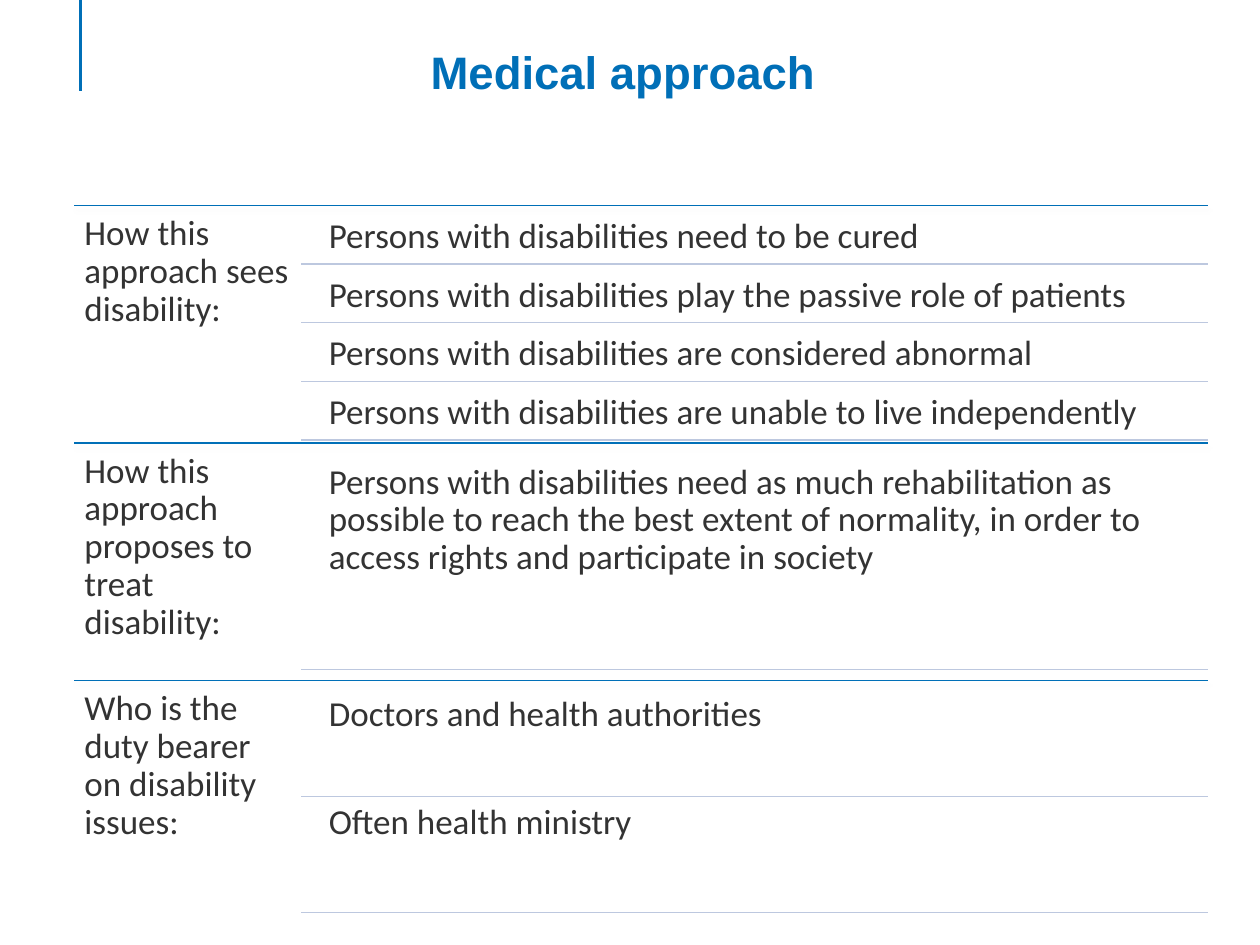
from lxml.etree import SubElement
from pptx import Presentation
from pptx.dml.color import RGBColor
from pptx.enum.shapes import MSO_CONNECTOR
from pptx.enum.text import MSO_ANCHOR, PP_ALIGN
from pptx.oxml.ns import qn
from pptx.util import Inches, Pt

BLUE, PALE, DARK = "006FB7", "BDC8DF", "333333"
LEFT, TOP, WIDTH = 0.59, 1.63, 9.0
SECTION_H = 1.885
LABEL_W = WIDTH / 5
ITEM_X, ITEM_W = 2.53, 7.07
GAP_SHARE = 0.05  # gap between items, as a share of an item's height

# Label, then items as (text, vertical shift of the text)
SECTIONS = [
    ("How this approach sees disability:", [
        ("Persons with disabilities need to be cured", 0),
        ("Persons with disabilities play the passive role of patients", 0),
        ("Persons with disabilities are considered abnormal", 0),
        ("Persons with disabilities are unable to live independently", 0),
    ]),
    ("How this approach proposes to treat disability:", [
        ("Persons with disabilities need as much rehabilitation as possible to "
         "reach the best extent of normality, in order to access rights and "
         "participate in society", 0),
    ]),
    ("Who is the duty bearer on disability issues:", [
        ("Doctors and health authorities", 0),
        ("Often health ministry", -0.06),
    ]),
]


def rgb(value):
    return RGBColor.from_string(value)


def write(tf, text, size=20, font="Calibri", color=DARK, bold=False,
          align=PP_ALIGN.LEFT, spacing=0.9, after=7):
    tf.word_wrap = True
    tf.vertical_anchor = MSO_ANCHOR.TOP
    p = tf.paragraphs[0]
    p.alignment, p.line_spacing, p.space_after = align, spacing, Pt(after)
    r = p.add_run()
    r.text = text
    r.font.name, r.font.size, r.font.bold = font, Pt(size), bold
    r.font.color.rgb = rgb(color)


def add_text(shapes, text, x, y, w, h):
    tf = shapes.add_textbox(*map(Inches, (x, y, w, h))).text_frame
    tf.margin_left = tf.margin_right = Inches(0.08)
    tf.margin_top = tf.margin_bottom = Inches(0.08)
    write(tf, text)


def add_line(shapes, x1, y1, x2, y2, color, width=0.75, shadow=None):
    """Draw a line; shadow is (opacity in percent, distance in points)."""
    line = shapes.add_connector(MSO_CONNECTOR.STRAIGHT,
                                *map(Inches, (x1, y1, x2, y2)))
    line.line.color.rgb = rgb(color)
    line.line.width = Pt(width)
    effects = SubElement(line._element.spPr, qn("a:effectLst"))
    if shadow:
        opacity, distance = shadow
        outer = SubElement(effects, qn("a:outerShdw"), blurRad=str(Pt(3.1)),
                           dist=str(Pt(distance)), dir="5400000",
                           rotWithShape="0")
        black = SubElement(outer, qn("a:srgbClr"), val="000000")
        SubElement(black, qn("a:alpha"), val=str(opacity * 1000))


def add_title(s, text):
    title = s.shapes.title
    title.left, title.top, title.width, title.height = map(
        Inches, (0.81, 0.3, 8.27, 1.19))
    write(title.text_frame, text, size=26, font="Arial", color=BLUE, bold=True,
          align=PP_ALIGN.CENTER, spacing=1.0, after=0)


def add_section(shapes, top, label, items):
    right = LEFT + WIDTH
    add_line(shapes, LEFT, top, right, top, BLUE, shadow=(35, 1.8))
    add_text(shapes, label, LEFT, top, LABEL_W, SECTION_H)
    n = len(items)
    item_h = SECTION_H / (n + (n + 1) * GAP_SHARE)
    gap = item_h * GAP_SHARE
    for i, (text, shift) in enumerate(items):
        y = top + gap + i * (item_h + gap)
        add_text(shapes, text, ITEM_X, y + shift, ITEM_W, item_h)
        add_line(shapes, LEFT + LABEL_W, y + item_h, right, y + item_h, PALE,
                 shadow=(38, 1.6))


def main():
    prs = Presentation()
    prs.slide_width, prs.slide_height = Inches(10), Inches(7.5)
    s = prs.slides.add_slide(prs.slide_layouts[5])
    add_line(s.shapes, 0.64, 0, 0.64, 0.72, BLUE, width=2)
    add_title(s, "Medical approach")
    group = s.shapes.add_group_shape()
    for i, (label, items) in enumerate(SECTIONS):
        add_section(group.shapes, TOP + i * SECTION_H, label, items)
    prs.save("out.pptx")


if __name__ == "__main__":
    main()
